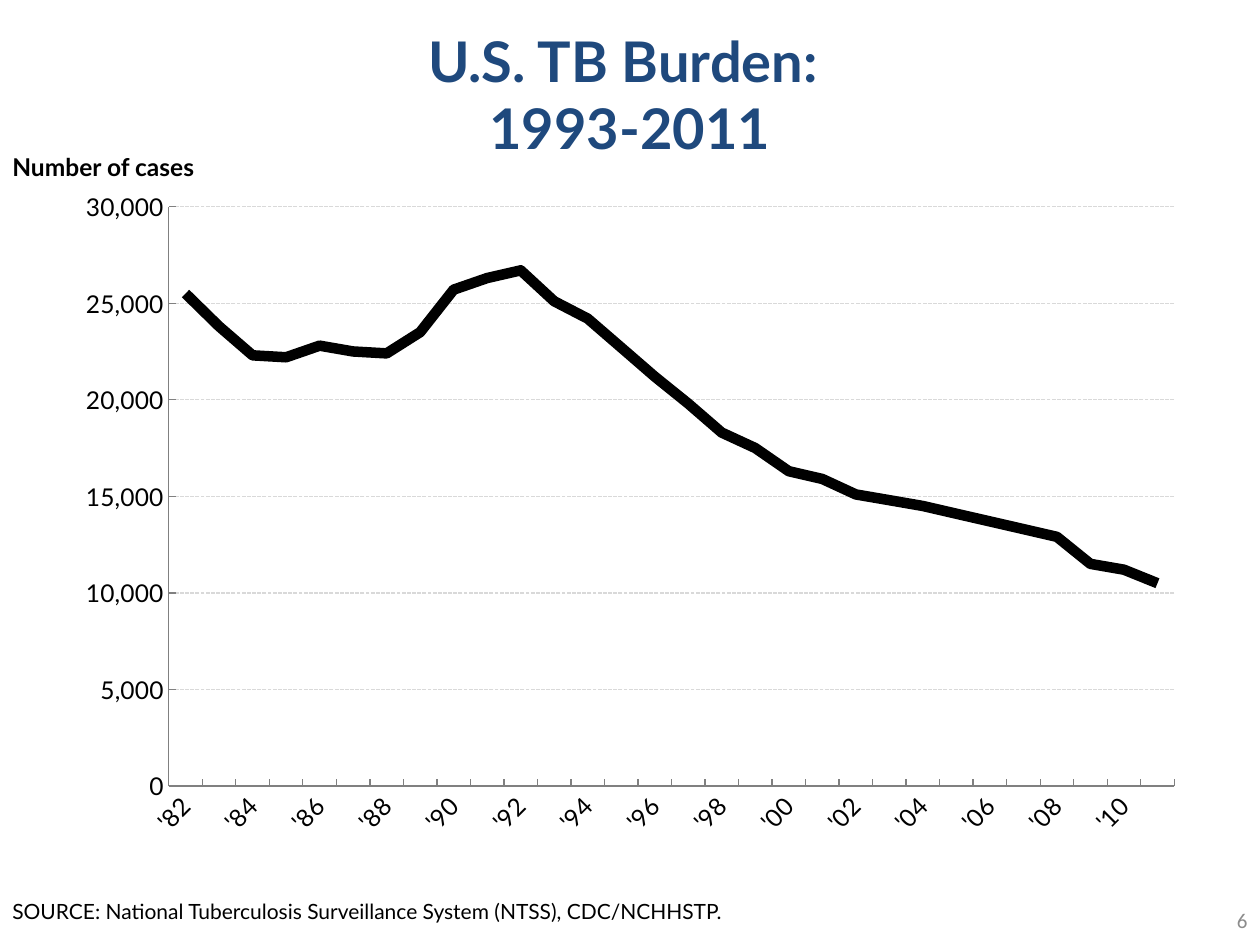
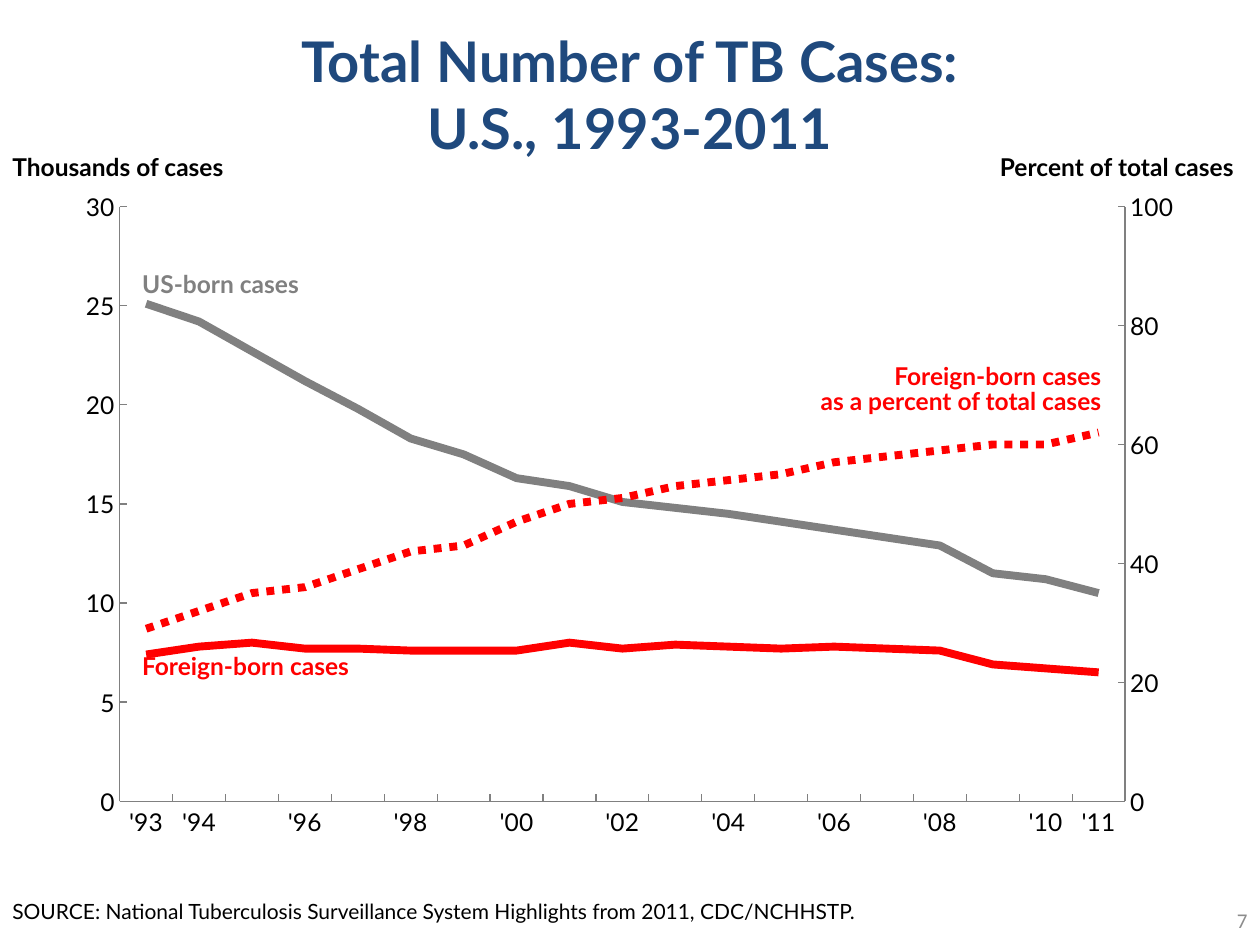
import copy
from dataclasses import dataclass
from typing import Optional

import lxml.etree
import pptx
import pptx.chart.axis
import pptx.chart.chart
import pptx.chart.data
import pptx.dml.color
import pptx.enum.chart
import pptx.enum.dml
import pptx.enum.text
import pptx.oxml
import pptx.oxml.ns
import pptx.slide
import pptx.util
from pptx.util import Inches, Pt

COLOURS = {
    "title": "1F497D",
    "text": "000000",
    "us_born": "808080",
    "foreign_born": "FF0000",
    "axis": "808080",
    "grid": "D9D9D9",
    "slide_number": "8C8C8C",
}
FONT = "Lato"
LABEL_SIZE = 14
CHART_BOX = (0.5, 1.42, 9, 5.33)
LEFT = pptx.enum.text.PP_ALIGN.LEFT
CENTER = pptx.enum.text.PP_ALIGN.CENTER
RIGHT = pptx.enum.text.PP_ALIGN.RIGHT
TOP = pptx.enum.text.MSO_ANCHOR.TOP
MIDDLE = pptx.enum.text.MSO_ANCHOR.MIDDLE
DASH = pptx.enum.dml.MSO_LINE

Box = tuple[float, float, float, float]


@dataclass
class Label:
    """Text in a box given in inches; each line is a paragraph."""
    lines: list[str]
    box: Box
    colour: str = "text"
    size: float = LABEL_SIZE
    bold: bool = True
    align: pptx.enum.text.PP_ALIGN = LEFT
    anchor: pptx.enum.text.MSO_ANCHOR = TOP
    line_spacing: float = 1.0
    space_before: float = 0
    font: str = FONT


@dataclass
class Scale:
    maximum: float
    step: float
    number_format: str = "General"
    gridlines: bool = False


@dataclass
class Line:
    values: list[float]
    colour: str
    width: float
    dash: Optional[pptx.enum.dml.MSO_LINE] = None


@dataclass
class CaseChart:
    """Yearly lines; with a right scale, the last line is drawn against it."""
    first_year: int
    lines: list[Line]
    plot: Box
    scale: Scale
    right_scale: Optional[Scale] = None
    label_rotation: int = 0
    label_step: int = 1


@dataclass
class CaseSlide:
    number: int
    title: str
    source: str
    chart: CaseChart
    labels: list[Label]


SLIDES = [
    CaseSlide(
        6,
        "U.S. TB Burden: \n1993-2011",
        "SOURCE: National Tuberculosis Surveillance System (NTSS), CDC/NCHHSTP.",
        CaseChart(
            1982,
            [Line([25500, 23800, 22300, 22200, 22800, 22500, 22400, 23500, 25700, 26300,
                   26700, 25100, 24200, 22700, 21200, 19800, 18300, 17500, 16300, 15900,
                   15100, 14800, 14500, 14100, 13700, 13300, 12900, 11500, 11200, 10500],
                  "text", 6)],
            (1.34, 1.64, 7.98, 4.6),
            Scale(30000, 5000, "#,##0", gridlines=True),
            label_rotation=-45,
            label_step=2,
        ),
        [Label(["Number of cases"], (0, 1.16, 2.23, 0.34))],
    ),
    CaseSlide(
        7,
        "Total Number of TB Cases:\nU.S., 1993-2011",
        "SOURCE: National Tuberculosis Surveillance System Highlights from 2011, CDC/NCHHSTP.",
        CaseChart(
            1993,
            [Line([25.1, 24.2, 22.7, 21.2, 19.8, 18.3, 17.5, 16.3, 15.9, 15.1,
                   14.8, 14.5, 14.1, 13.7, 13.3, 12.9, 11.5, 11.2, 10.5], "us_born", 4.5),
             Line([7.4, 7.8, 8, 7.7, 7.7, 7.6, 7.6, 7.6, 8, 7.7,
                   7.9, 7.8, 7.7, 7.8, 7.7, 7.6, 6.9, 6.7, 6.5], "foreign_born", 4.5),
             Line([29, 32, 35, 36, 39, 42, 43, 47, 50, 51,
                   53, 54, 55, 57, 58, 59, 60, 60, 62], "foreign_born", 4.5, DASH.ROUND_DOT)],
            (0.95, 1.64, 7.98, 4.72),
            Scale(30, 5),
            Scale(100, 20),
        ),
        [
            Label(["US-born cases"], (1.03, 2, 2.47, 0.5), "us_born",
                  anchor=MIDDLE, space_before=2.8),
            Label(["Foreign-born cases"], (1.03, 5.08, 2.67, 0.4), "foreign_born",
                  anchor=MIDDLE, space_before=2.8),
            Label(["Foreign-born cases", "as a percent of total cases"],
                  (5.92, 2.83, 2.92, 0.56), "foreign_born", align=RIGHT, anchor=MIDDLE,
                  line_spacing=0.7, space_before=2.8),
            Label(["Thousands of cases"], (0, 1.16, 2.26, 0.34)),
            Label(["Percent of total cases"], (7.38, 1.16, 2.51, 0.34), align=RIGHT),
        ],
    ),
]


def rgb(name: str) -> pptx.dml.color.RGBColor:
    return pptx.dml.color.RGBColor.from_string(COLOURS[name])


def set_font(font, colour: str, size: float, bold: bool = False, name: str = FONT) -> None:
    font.name = name
    font.size = Pt(size)
    font.bold = bold
    font.color.rgb = rgb(colour)


def chart_element(tag: str, value) -> lxml.etree._Element:
    element = pptx.oxml.parse_xml(f"<c:{tag} {pptx.oxml.ns.nsdecls('c')}/>")
    element.set("val", str(value))
    return element


def child(parent: lxml.etree._Element, tag: str) -> lxml.etree._Element:
    return parent.find(pptx.oxml.ns.qn(f"c:{tag}"))


def add_label(slide: pptx.slide.Slide, label: Label) -> None:
    shape = slide.shapes.add_textbox(*map(Inches, label.box))
    frame = shape.text_frame
    frame.word_wrap = True
    frame.vertical_anchor = label.anchor
    for index, line in enumerate(label.lines):
        paragraph = frame.add_paragraph() if index else frame.paragraphs[0]
        paragraph.text = line
        paragraph.alignment = label.align
        paragraph.line_spacing = label.line_spacing
        paragraph.space_before = Pt(label.space_before)
        set_font(paragraph.font, label.colour, label.size, label.bold, label.font)


def set_title(slide: pptx.slide.Slide, text: str) -> None:
    title = slide.shapes.title
    title.left, title.top, title.width, title.height = map(Inches, (0, 0.08, 10, 1.33))
    frame = title.text_frame
    frame.auto_size = pptx.enum.text.MSO_AUTO_SIZE.NONE
    frame.vertical_anchor = MIDDLE
    paragraph = frame.paragraphs[0]
    paragraph.text = text
    paragraph.alignment = CENTER
    set_font(paragraph.font, "title", 32, bold=True)


def format_axis(axis) -> None:
    axis.major_tick_mark = pptx.enum.chart.XL_TICK_MARK.INSIDE
    axis.minor_tick_mark = pptx.enum.chart.XL_TICK_MARK.NONE
    axis.format.line.color.rgb = rgb("axis")
    axis.format.line.width = Pt(0.75)
    set_font(axis.tick_labels.font, "text", LABEL_SIZE)


def apply_scale(axis: pptx.chart.axis.ValueAxis, scale: Scale) -> None:
    axis.minimum_scale = 0
    axis.maximum_scale = scale.maximum
    axis.major_unit = scale.step
    axis.tick_labels.number_format = scale.number_format
    axis.tick_labels.number_format_is_linked = False
    axis.has_major_gridlines = scale.gridlines
    if scale.gridlines:
        line = axis.major_gridlines.format.line
        line.color.rgb = rgb("grid")
        line.width = Pt(0.75)
        line.dash_style = DASH.SQUARE_DOT


def format_year_axis(axis, rotation: int, step: int) -> None:
    format_axis(axis)
    element = axis._element
    body = element.find(".//" + pptx.oxml.ns.qn("a:bodyPr"))
    body.set("rot", str(rotation * 60000))
    body.set("vert", "horz")
    last = child(element, "noMultiLvlLbl")
    last.addprevious(chart_element("tickLblSkip", step))
    last.addprevious(chart_element("tickMarkSkip", 1))


def place_plot(plot_area: lxml.etree._Element, plot: Box) -> None:
    """Fix the inner plot area, given in inches on the slide."""
    left, top, width, height = CHART_BOX
    fractions = {
        "x": (plot[0] - left) / width,
        "y": (plot[1] - top) / height,
        "w": plot[2] / width,
        "h": plot[3] / height,
    }
    layout = child(plot_area, "layout")
    if layout is not None:
        plot_area.remove(layout)
    layout = pptx.oxml.parse_xml(
        f"<c:layout {pptx.oxml.ns.nsdecls('c')}><c:manualLayout/></c:layout>")
    manual = layout[0]
    manual.append(chart_element("layoutTarget", "inner"))
    for mode in ("xMode", "yMode"):
        manual.append(chart_element(mode, "edge"))
    for tag, fraction in fractions.items():
        manual.append(chart_element(tag, round(fraction, 4)))
    plot_area.insert(0, layout)


def move_last_line_to_right_axis(chart: pptx.chart.chart.Chart, scale: Scale) -> None:
    category = chart.category_axis._element
    value = chart.value_axis._element
    plot_area = value.getparent()
    left_lines = child(plot_area, "lineChart")
    right_lines = copy.deepcopy(left_lines)
    series_tag = pptx.oxml.ns.qn("c:ser")
    left_lines.remove(left_lines.findall(series_tag)[-1])
    for series in right_lines.findall(series_tag)[:-1]:
        right_lines.remove(series)
    left_lines.addnext(right_lines)

    right_category, right_value = copy.deepcopy(category), copy.deepcopy(value)
    category_id, value_id = "50010", "50020"
    for axis, own, other in ((right_category, category_id, value_id),
                             (right_value, value_id, category_id)):
        child(axis, "axId").set("val", own)
        child(axis, "crossAx").set("val", other)
    for axis_id, new_id in zip(right_lines.findall(pptx.oxml.ns.qn("c:axId")),
                               (category_id, value_id)):
        axis_id.set("val", new_id)
    value.addnext(right_value)
    right_value.addnext(right_category)
    child(right_value, "axPos").set("val", "r")
    child(right_value, "crosses").set("val", "max")
    pptx.chart.axis.CategoryAxis(right_category).visible = False
    apply_scale(pptx.chart.axis.ValueAxis(right_value), scale)


def add_case_chart(slide: pptx.slide.Slide, case_chart: CaseChart) -> None:
    data = pptx.chart.data.CategoryChartData()
    years = range(case_chart.first_year, 2012)
    data.categories = [
        f"'{year % 100:02}" if year % 2 == 0 or year in (years[0], years[-1]) else ""
        for year in years
    ]
    for number, line in enumerate(case_chart.lines, 1):
        data.add_series(f"Series {number}", line.values)
    chart = slide.shapes.add_chart(
        pptx.enum.chart.XL_CHART_TYPE.LINE, *map(Inches, CHART_BOX), data).chart
    chart.has_legend = False
    chart.has_title = False
    set_font(chart.font, "text", LABEL_SIZE)
    plot = chart.plots[0]
    plot.vary_by_categories = False
    for series, line in zip(plot.series, case_chart.lines):
        series.smooth = False
        series.marker.style = pptx.enum.chart.XL_MARKER_STYLE.NONE
        series.format.line.color.rgb = rgb(line.colour)
        series.format.line.width = Pt(line.width)
        if line.dash is not None:
            series.format.line.dash_style = line.dash

    format_year_axis(chart.category_axis, case_chart.label_rotation, case_chart.label_step)
    format_axis(chart.value_axis)
    apply_scale(chart.value_axis, case_chart.scale)
    value = chart.value_axis._element
    if child(value, "crossBetween") is None:
        child(value, "crosses").addnext(chart_element("crossBetween", "between"))
    place_plot(value.getparent(), case_chart.plot)
    if case_chart.right_scale is not None:
        move_last_line_to_right_axis(chart, case_chart.right_scale)


def main() -> None:
    presentation = pptx.Presentation()
    presentation.slide_width = Inches(10)
    presentation.slide_height = Inches(7.5)
    title_only = presentation.slide_layouts[5]
    for case_slide in SLIDES:
        slide = presentation.slides.add_slide(title_only)
        set_title(slide, case_slide.title)
        add_case_chart(slide, case_slide.chart)
        source = Label([case_slide.source], (0, 7.12, 8, 0.38), size=12, bold=False,
                       line_spacing=0.8)
        number = Label([str(case_slide.number)], (9.33, 7.1, 0.67, 0.4), "slide_number", 12,
                       bold=False, align=RIGHT, anchor=MIDDLE, font="Calibri")
        for label in (source, number, *case_slide.labels):
            add_label(slide, label)
    presentation.save("out.pptx")


if __name__ == "__main__":
    main()
